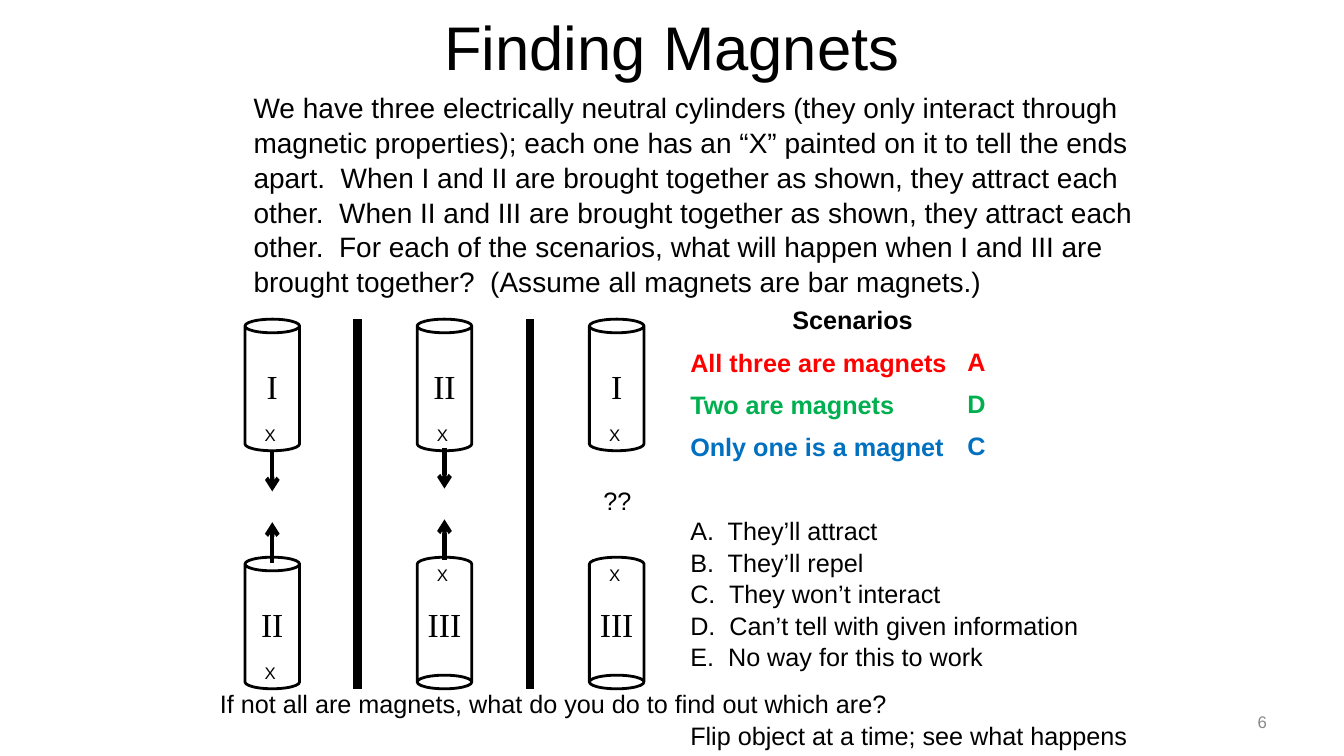
from dataclasses import dataclass

from lxml import etree
from pptx import Presentation
from pptx.dml.color import RGBColor
from pptx.enum.shapes import MSO_CONNECTOR, MSO_SHAPE
from pptx.enum.text import MSO_ANCHOR, PP_ALIGN
from pptx.oxml.ns import qn
from pptx.util import Pt

LEFT, CENTER, RIGHT = PP_ALIGN.LEFT, PP_ALIGN.CENTER, PP_ALIGN.RIGHT
TOP, MIDDLE = MSO_ANCHOR.TOP, MSO_ANCHOR.MIDDLE
STRAIGHT = MSO_CONNECTOR.STRAIGHT
CAN = MSO_SHAPE.CAN
TITLE_ONLY = 5


@dataclass(frozen=True)
class Theme:
    font: str = "Arial"
    numeral_font: str = "Times New Roman"
    black: str = "000000"
    red: str = "FF0000"
    green: str = "00B050"
    blue: str = "0070C0"
    gray: str = "898989"
    title: int = 44
    numeral: int = 24
    question: int = 20
    text: int = 18
    small: int = 12
    spacing: float = 1.04


class SlideBuilder:
    def __init__(self, slide, theme):
        self.slide = slide
        self.theme = theme

    def styled_run(self, paragraph, text, size, color=None, bold=False,
                   font=None):
        run = paragraph.add_run()
        run.text = text
        run.font.size = Pt(size)
        run.font.bold = bold
        run.font.name = font or self.theme.font
        run.font.color.rgb = RGBColor.from_string(color or self.theme.black)

    def title(self, text, left, top, width, height):
        shape = self.slide.shapes.title
        shape.left, shape.top = Pt(left), Pt(top)
        shape.width, shape.height = Pt(width), Pt(height)
        shape.text_frame.vertical_anchor = MIDDLE
        paragraph = shape.text_frame.paragraphs[0]
        paragraph.alignment = CENTER
        self.styled_run(paragraph, text, self.theme.title)

    def text(self, lines, left, top, width, height, size=None,
             align=LEFT, anchor=TOP, **style):
        """Add a text box with one paragraph for each line."""
        shape = self.slide.shapes.add_textbox(
            Pt(left), Pt(top), Pt(width), Pt(height))
        frame = shape.text_frame
        frame.word_wrap = True
        frame.vertical_anchor = anchor
        for index, line in enumerate(lines):
            paragraph = frame.add_paragraph() if index else frame.paragraphs[0]
            paragraph.alignment = align
            paragraph.line_spacing = self.theme.spacing
            self.styled_run(paragraph, line, size or self.theme.text, **style)

    def line(self, x, start, end, weight, arrow=False):
        """Add a vertical line, with an optional arrowhead at its end."""
        connector = self.slide.shapes.add_connector(
            STRAIGHT, Pt(x), Pt(start), Pt(x), Pt(end))
        connector.line.width = Pt(weight)
        connector.line.color.rgb = RGBColor.from_string(self.theme.black)
        properties = connector.element.spPr
        if arrow:
            etree.SubElement(properties.find(qn("a:ln")), qn("a:tailEnd"),
                             type="arrow")
        etree.SubElement(properties, qn("a:effectLst"))

    def cylinder(self, numeral, left, top, flipped=False):
        """Add a cylinder with its numeral and the X painted at one end."""
        shape = self.slide.shapes.add_shape(
            CAN, Pt(left), Pt(top), Pt(CYLINDER_WIDTH), Pt(CYLINDER_HEIGHT))
        shape.shadow.inherit = False
        shape.fill.background()
        shape.line.width = Pt(2)
        shape.line.color.rgb = RGBColor.from_string(self.theme.black)
        shape.rotation = 180 if flipped else 0
        self.text(["X"], left + 7, top + (1.5 if flipped else 71), 24, 22,
                  self.theme.small)
        self.text([numeral], left - 1, top + 29, 41, 36, self.theme.numeral,
                  align=CENTER, font=self.theme.numeral_font)


CYLINDER_WIDTH, CYLINDER_HEIGHT = 39, 94
FIRST_COLUMN, COLUMN_STEP = 175, 123
UPPER_ROW, LOWER_ROW = 228, 398
RIGHT_TEXT = 486

QUESTION = (
    "We have three electrically neutral cylinders (they only interact through "
    "magnetic properties); each one has an “X” painted on it to tell the ends "
    "apart.  When I and II are brought together as shown, they attract each "
    "other.  When II and III are brought together as shown, they attract each "
    "other.  For each of the scenarios, what will happen when I and III are "
    "brought together?  (Assume all magnets are bar magnets.)")

CHOICES = [
    "A.  They’ll attract",
    "B.  They’ll repel",
    "C.  They won’t interact",
    "D.  Can’t tell with given information",
    "E.  No way for this to work",
]

# Upper numeral, lower numeral, whether the lower cylinder is flipped
PAIRS = [("I", "II", False), ("II", "III", True), ("I", "III", True)]


def main():
    presentation = Presentation()
    presentation.slide_width, presentation.slide_height = Pt(960), Pt(540)
    slide = presentation.slides.add_slide(
        presentation.slide_layouts[TITLE_ONLY])
    theme = Theme()
    builder = SlideBuilder(slide, theme)

    builder.title("Finding Magnets", 156, 0, 648, 66)
    builder.text([QUESTION], 174, 60, 666, 153, theme.question)

    for column, (upper, lower, flipped) in enumerate(PAIRS):
        left = FIRST_COLUMN + column * COLUMN_STEP
        builder.cylinder(upper, left, UPPER_ROW)
        builder.cylinder(lower, left, LOWER_ROW, flipped)
        if column < len(PAIRS) - 1:
            center = left + CYLINDER_WIDTH / 2
            shift = -2 * column
            builder.line(center, 322 + shift, 351 + shift, 3, arrow=True)
            builder.line(center, 402 + shift, 373 + shift, 3, arrow=True)
            builder.line(left + 80.5, UPPER_ROW,
                         LOWER_ROW + CYLINDER_HEIGHT, 6)
    builder.text(["??"], 423, 342, 36, 29, align=CENTER)

    builder.text(["Scenarios"], RIGHT_TEXT, 213, 246, 29,
                 align=CENTER, bold=True)
    scenarios = [
        ("All three are magnets", "A", theme.red),
        ("Two are magnets", "D", theme.green),
        ("Only one is a magnet", "C", theme.blue),
    ]
    for row, (scenario, answer, color) in enumerate(scenarios):
        top = 243.5 + row * 30.25
        builder.text([scenario], RIGHT_TEXT, top, 204, 29,
                     color=color, bold=True)
        builder.text([answer], 684, top - 0.75, 36, 30,
                     color=color, bold=True)

    builder.text(CHOICES, RIGHT_TEXT, 364, 312, 117)
    builder.text(
        ["If not all are magnets, what do you do to find out which are?"],
        150, 487, 498, 29)
    builder.text(["Flip object at a time; see what happens"],
                 RIGHT_TEXT, 510, 354, 29)
    builder.text(["6"], 688, 500.5, 224, 29, theme.small,
                 align=RIGHT, anchor=MIDDLE, color=theme.gray)

    presentation.save("out.pptx")


if __name__ == "__main__":
    main()
